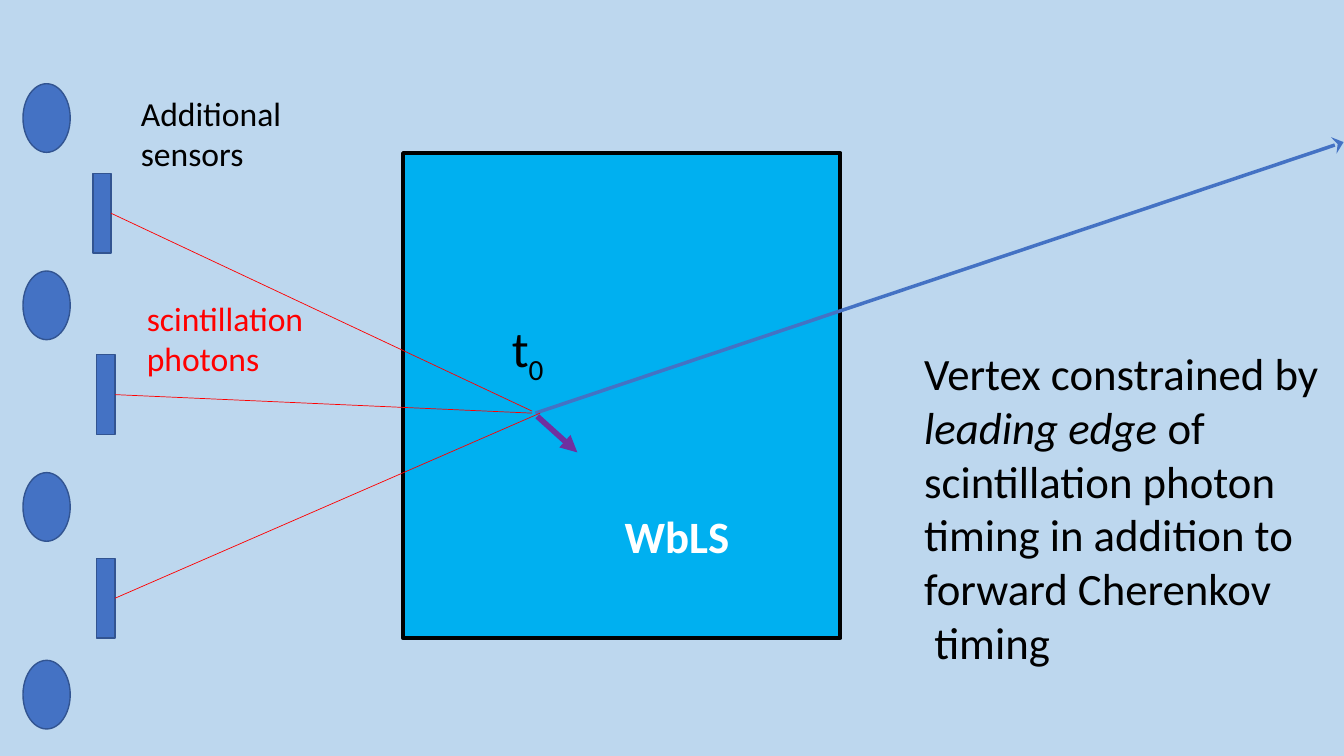
from dataclasses import dataclass

from lxml.etree import SubElement
from pptx import Presentation
from pptx.dml.color import RGBColor
from pptx.enum.shapes import MSO_CONNECTOR, MSO_SHAPE
from pptx.enum.text import MSO_AUTO_SIZE as AutoSize
from pptx.oxml.ns import qn
from pptx.util import Cm, Pt


@dataclass(frozen=True)
class Theme:
    font: str = "Calibri"
    background: str = "BDD7EE"
    water: str = "00B0F0"
    detector: str = "4472C4"
    outline: str = "325491"
    photon: str = "FF0000"
    recoil: str = "7030A0"
    ink: str = "000000"
    white: str = "FFFFFF"
    label: int = 24
    body: int = 32
    symbol: int = 36


class Diagram:
    def __init__(self, slide, theme):
        self.s, self.theme = slide, theme
        self.s.background.fill.solid()
        self.s.background.fill.fore_color.rgb = RGBColor.from_string(theme.background)

    def shape(self, kind, box, fill, line, width):
        sp = self.s.shapes.add_shape(kind, *map(Cm, box))
        sp.shadow.inherit = False
        sp.fill.solid()
        sp.fill.fore_color.rgb = RGBColor.from_string(fill)
        sp.line.color.rgb = RGBColor.from_string(line)
        sp.line.width = Pt(width)
        return sp

    def line(self, start, end, color, width, arrow=None, head_width="med", target=None):
        """Draw a straight line; target is a shape joined at its right side."""
        c = self.s.shapes.add_connector(MSO_CONNECTOR.STRAIGHT, *map(Cm, start + end))
        c.line.color.rgb = RGBColor.from_string(color)
        c.line.width = Pt(width)
        if arrow:
            SubElement(c.line._get_or_add_ln(), qn("a:tailEnd"), type=arrow, w=head_width)
        SubElement(c._element.spPr, qn("a:effectLst"))
        if target is not None:
            c.end_connect(target, 3)

    def text(self, box, lines, size, color, bold=False):
        """Write paragraphs, each a list of (text, style) runs."""
        tf = self.s.shapes.add_textbox(*map(Cm, box)).text_frame
        tf.word_wrap = False
        tf.auto_size = AutoSize.SHAPE_TO_FIT_TEXT
        for i, runs in enumerate(lines):
            p = tf.add_paragraph() if i else tf.paragraphs[0]
            for text, style in runs:
                r = p.add_run()
                r.text = text
                r.font.name = self.theme.font
                r.font.size = Pt(size)
                r.font.color.rgb = RGBColor.from_string(color)
                r.font.bold = bold
                r.font.italic = style == "italic"
                if style == "subscript":
                    r._r.get_or_add_rPr().set("baseline", "-25000")


def plain(*lines):
    return [[(line, None)] for line in lines]


def main():
    prs = Presentation()
    prs.slide_width, prs.slide_height = Cm(33.87), Cm(19.05)
    t = Theme()
    d = Diagram(prs.slides.add_slide(prs.slide_layouts[6]), t)

    d.shape(MSO_SHAPE.RECTANGLE, (10.16, 3.86, 11.02, 12.22), t.water, t.ink, 3)
    for top in (2.11, 6.83, 11.91, 16.64):
        d.shape(MSO_SHAPE.OVAL, (0.58, top, 1.19, 1.73), t.detector, t.outline, 1)

    d.line((13.49, 10.41), (33.86, 3.58), t.detector, 2.5, arrow="stealth", head_width="lg")

    sensors = [
        d.shape(MSO_SHAPE.RECTANGLE, (left, top, 0.46, 2.01), t.detector, t.outline, 1)
        for left, top in ((2.34, 4.37), (2.44, 8.94), (2.44, 14.07))
    ]
    d.text((12.65, 7.87, 1.93, 2.54), [[("t", None), ("0", "subscript")]], t.symbol, t.ink)

    photon_starts = ((13.41, 10.36), (13.41, 10.41), (13.61, 10.41))
    for start, sensor in zip(photon_starts, sensors):
        d.line(start, start, t.photon, 0.5, target=sensor)

    d.text((3.45, 7.37, 4.7, 2.31), plain("scintillation", "photons"), t.label, t.photon)
    conclusion = [
        *plain("Vertex constrained by"),
        [("leading edge ", "italic"), ("of", None)],
        *plain("scintillation photon", "timing in addition to", "forward Cherenkov", " timing"),
    ]
    d.text((23.04, 8.59, 10.82, 8.46), conclusion, t.body, t.ink)
    d.text((15.49, 12.7, 3.18, 1.63), plain("WbLS"), t.body, t.white, bold=True)
    d.text((3.3, 2.21, 4.29, 2.31), plain("Additional", "sensors"), t.label, t.ink)
    d.line((13.54, 10.49), (14.55, 11.4), t.recoil, 4, arrow="triangle")

    prs.save("out.pptx")


if __name__ == "__main__":
    main()
